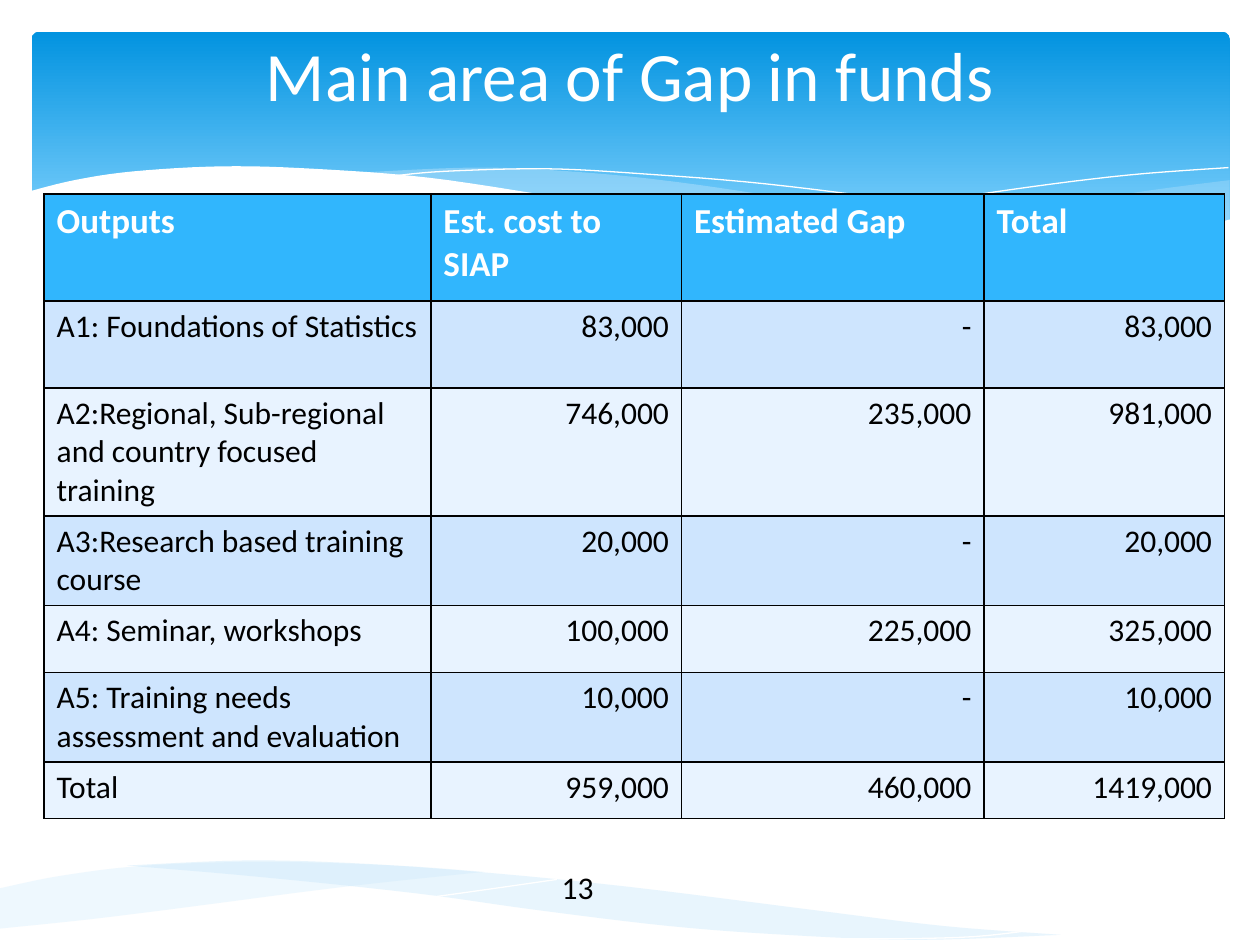
from lxml import etree
from pptx import Presentation
from pptx.dml.color import RGBColor
from pptx.enum.shapes import MSO_SHAPE
from pptx.enum.text import MSO_ANCHOR, PP_ALIGN
from pptx.oxml.ns import qn
from pptx.util import Inches, Pt

ROUNDED = MSO_SHAPE.ROUNDED_RECTANGLE
MIDDLE = MSO_ANCHOR.MIDDLE
LEFT, CENTER, RIGHT = PP_ALIGN.LEFT, PP_ALIGN.CENTER, PP_ALIGN.RIGHT

FONT = "Calibri"
WHITE = RGBColor(0xFF, 0xFF, 0xFF)
BLACK = RGBColor(0, 0, 0)
BANNER_TOP = RGBColor(0x02, 0x93, 0xE0)
BANNER_BOTTOM = RGBColor(0x83, 0xD3, 0xFE)
WAVE = RGBColor(0xC6, 0xE7, 0xFC)
HEADER = RGBColor(0x31, 0xB6, 0xFD)
BANDS = (RGBColor(0xCE, 0xE5, 0xFE), RGBColor(0xE8, 0xF3, 0xFF))

# Each outline is a list of smooth arcs, given by points in inches
TOP_RIGHT_WAVE = [
    [(9.76, 1.43), (9.21, 1.5), (8.61, 1.59), (7.53, 1.76), (6.61, 1.87)],
    [(6.61, 1.87), (7.19, 1.92), (8.03, 1.96), (8.81, 1.93), (9.35, 1.85), (9.76, 1.75)],
]
TOP_MIDDLE_WAVE = [
    [(8.93, 1.92), (8.07, 1.84), (7.06, 1.7), (6.29, 1.58), (5.41, 1.45), (4.65, 1.37),
     (3.8, 1.33), (2.86, 1.37)],
    [(2.86, 1.37), (3.62, 1.45), (4.49, 1.58), (5.66, 1.76), (6.65, 1.88), (7.48, 1.94),
     (8.28, 1.96), (8.93, 1.92)],
]
TOP_LONG_LINE = [
    [(3.09, 1.4), (3.53, 1.36), (4.33, 1.34), (5.1, 1.38), (6.08, 1.46), (7.27, 1.61),
     (8.31, 1.77), (9.07, 1.92)],
]
TOP_SHORT_LINE = [
    [(6.13, 1.81), (6.95, 1.67), (8.06, 1.5), (8.95, 1.39), (9.75, 1.33)],
]
BANNER_EDGE = [
    [(9.77, 1.74), (9.2, 1.87), (8.5, 1.94), (7.78, 1.94), (6.88, 1.89), (5.79, 1.77),
     (4.47, 1.57), (3.4, 1.41), (2.5, 1.34), (1.77, 1.32), (1.06, 1.36), (0.59, 1.43),
     (0.23, 1.52)],
    [(0.23, 2.3), (9.77, 2.3)],
]
BOTTOM_MIDDLE_WAVE = [
    [(1.01, 6.87), (2.06, 6.96), (3.3, 7.09), (4.24, 7.22), (5.31, 7.35), (6.24, 7.42),
     (7.28, 7.46), (8.42, 7.42)],
    [(8.42, 7.42), (7.49, 7.35), (6.43, 7.22), (5, 7.04), (3.79, 6.92), (2.78, 6.85),
     (1.93, 6.83), (1.01, 6.87)],
]
BOTTOM_LONG_LINE = [
    [(8.14, 7.39), (7.61, 7.44), (6.63, 7.45), (5.69, 7.42), (4.49, 7.34), (3.04, 7.19),
     (1.77, 7.02), (0.84, 6.88)],
]
BOTTOM_SHORT_LINE = [
    [(4.42, 6.98), (3.43, 7.12), (2.07, 7.3), (0.98, 7.41), (0.01, 7.46)],
]
BOTTOM_LEFT_WAVE = [
    [(0, 7.37), (0.68, 7.3), (1.41, 7.21), (2.72, 7.04), (3.84, 6.92)],
    [(3.84, 6.92), (3.14, 6.87), (2.11, 6.84), (1.16, 6.87), (0.49, 6.95), (0, 7.05)],
]

COLUMN_WIDTHS = (3.07, 1.99, 2.4, 1.91)
ROW_HEIGHTS = (0.85, 0.69, 1.01, 0.71, 0.53, 0.71, 0.45)
ROWS = (
    ("Outputs", "Est. cost to SIAP", "Estimated Gap", "Total"),
    ("A1: Foundations of Statistics", "83,000", "-", "83,000"),
    ("A2:Regional, Sub-regional and country focused training", "746,000", "235,000", "981,000"),
    ("A3:Research based training course", "20,000", "-", "20,000"),
    ("A4: Seminar, workshops", "100,000", "225,000", "325,000"),
    ("A5: Training needs assessment and evaluation", "10,000", "-", "10,000"),
    ("Total", "959,000", "460,000", "1419,000"),
)


def smooth(points, steps=6):
    """Points along a Catmull-Rom curve through the given points."""
    if len(points) < 3:
        return list(points)
    padded = [points[0], *points, points[-1]]
    curve = [points[0]]
    for a, b, c, d in zip(padded, padded[1:], padded[2:], padded[3:]):
        for step in range(1, steps + 1):
            t = step / steps
            curve.append(tuple(
                (2 * q + (r - p) * t + (2 * p - 5 * q + 4 * r - s) * t ** 2
                 + (3 * q - p - 3 * r + s) * t ** 3) / 2
                for p, q, r, s in zip(a, b, c, d)))
    return curve


def write(frame, text, size=18, color=BLACK, bold=False, align=LEFT):
    para = frame.paragraphs[0]
    para.alignment = align
    span = para.add_run()
    span.text = text
    span.font.name = FONT
    span.font.size = Pt(size)
    span.font.bold = bold
    span.font.color.rgb = color


def add_borders(cell, color=BLACK, width=1):
    properties = cell._tc.get_or_add_tcPr()
    for index, side in enumerate(("lnL", "lnR", "lnT", "lnB")):
        line = etree.Element(qn(f"a:{side}"), w=str(Pt(width)))
        fill = etree.SubElement(line, qn("a:solidFill"))
        etree.SubElement(fill, qn("a:srgbClr"), val=str(color))
        properties.insert(index, line)


class SlideBuilder:
    def __init__(self, deck):
        self.page = deck.slides.add_slide(deck.slide_layouts[5])
        self.shapes = self.page.shapes

    def banner(self, left, top, width, height):
        box = self.shapes.add_shape(
            ROUNDED, Inches(left), Inches(top), Inches(width), Inches(height))
        box.adjustments[0] = 0.034
        box.shadow.inherit = False
        box.line.fill.background()
        box.fill.gradient()
        box.fill.gradient_angle = 270
        first, last = box.fill.gradient_stops
        first.color.rgb, first.position = BANNER_TOP, 0
        last.color.rgb, last.position = BANNER_BOTTOM, 0.9

    def outline(self, arcs, closed):
        points = [(Inches(x), Inches(y)) for arc in arcs for x, y in smooth(arc)]
        builder = self.shapes.build_freeform(*points[0])
        builder.add_line_segments(points[1:], close=closed)
        shape = builder.convert_to_shape()
        shape.shadow.inherit = False
        return shape

    def wave(self, arcs, color=WAVE, opacity=100):
        shape = self.outline(arcs, closed=True)
        shape.line.fill.background()
        shape.fill.solid()
        shape.fill.fore_color.rgb = color
        if opacity < 100:
            tint = shape.element.spPr.find(qn("a:solidFill"))[0]
            etree.SubElement(tint, qn("a:alpha"), val=str(opacity * 1000))

    def curve(self, arcs):
        shape = self.outline(arcs, closed=False)
        shape.fill.background()
        shape.line.color.rgb = WHITE
        shape.line.width = Pt(0)

    def table(self, left, top):
        table = self.shapes.add_table(
            len(ROWS), len(COLUMN_WIDTHS), Inches(left), Inches(top),
            Inches(sum(COLUMN_WIDTHS)), Inches(sum(ROW_HEIGHTS))).table
        for column, width in zip(table.columns, COLUMN_WIDTHS):
            column.width = Inches(width)
        for r, (row, height) in enumerate(zip(ROWS, ROW_HEIGHTS)):
            table.rows[r].height = Inches(height)
            for c, text in enumerate(row):
                cell = table.cell(r, c)
                cell.fill.solid()
                cell.fill.fore_color.rgb = BANDS[(r - 1) % 2] if r else HEADER
                add_borders(cell)
                if r == 0:
                    write(cell.text_frame, text, size=20, color=WHITE, bold=True)
                else:
                    write(cell.text_frame, text, align=RIGHT if c else LEFT)

    def text(self, text, left, top, width, height):
        box = self.shapes.add_textbox(
            Inches(left), Inches(top), Inches(width), Inches(height))
        box.text_frame.word_wrap = True
        write(box.text_frame, text)

    def title(self, text, left, top, width, height):
        title = self.shapes.title
        title.left, title.top = Inches(left), Inches(top)
        title.width, title.height = Inches(width), Inches(height)
        title.text_frame.vertical_anchor = MIDDLE
        write(title.text_frame, text, size=39.6, color=WHITE, align=CENTER)
        # Bring the title in front of the banner
        title.element.getparent().append(title.element)


def main():
    deck = Presentation()
    deck.slide_width, deck.slide_height = Inches(10), Inches(7.5)
    slide = SlideBuilder(deck)

    # Banner with waves
    slide.banner(0.25, 0.25, 9.51, 1.82)
    slide.wave(TOP_RIGHT_WAVE, opacity=29)
    slide.wave(TOP_MIDDLE_WAVE, opacity=40)
    slide.curve(TOP_LONG_LINE)
    slide.curve(TOP_SHORT_LINE)
    slide.wave(BANNER_EDGE, color=WHITE)

    # Footer waves
    slide.wave(BOTTOM_MIDDLE_WAVE, opacity=40)
    slide.curve(BOTTOM_LONG_LINE)
    slide.curve(BOTTOM_SHORT_LINE)
    slide.wave(BOTTOM_LEFT_WAVE, opacity=29)

    # Content
    slide.table(0.35, 1.54)
    slide.text("13", 4.36, 6.84, 1.27, 0.4)
    slide.title("Main area of Gap in funds", 0.5, 0.17, 9, 0.83)

    deck.save("out.pptx")


if __name__ == "__main__":
    main()
